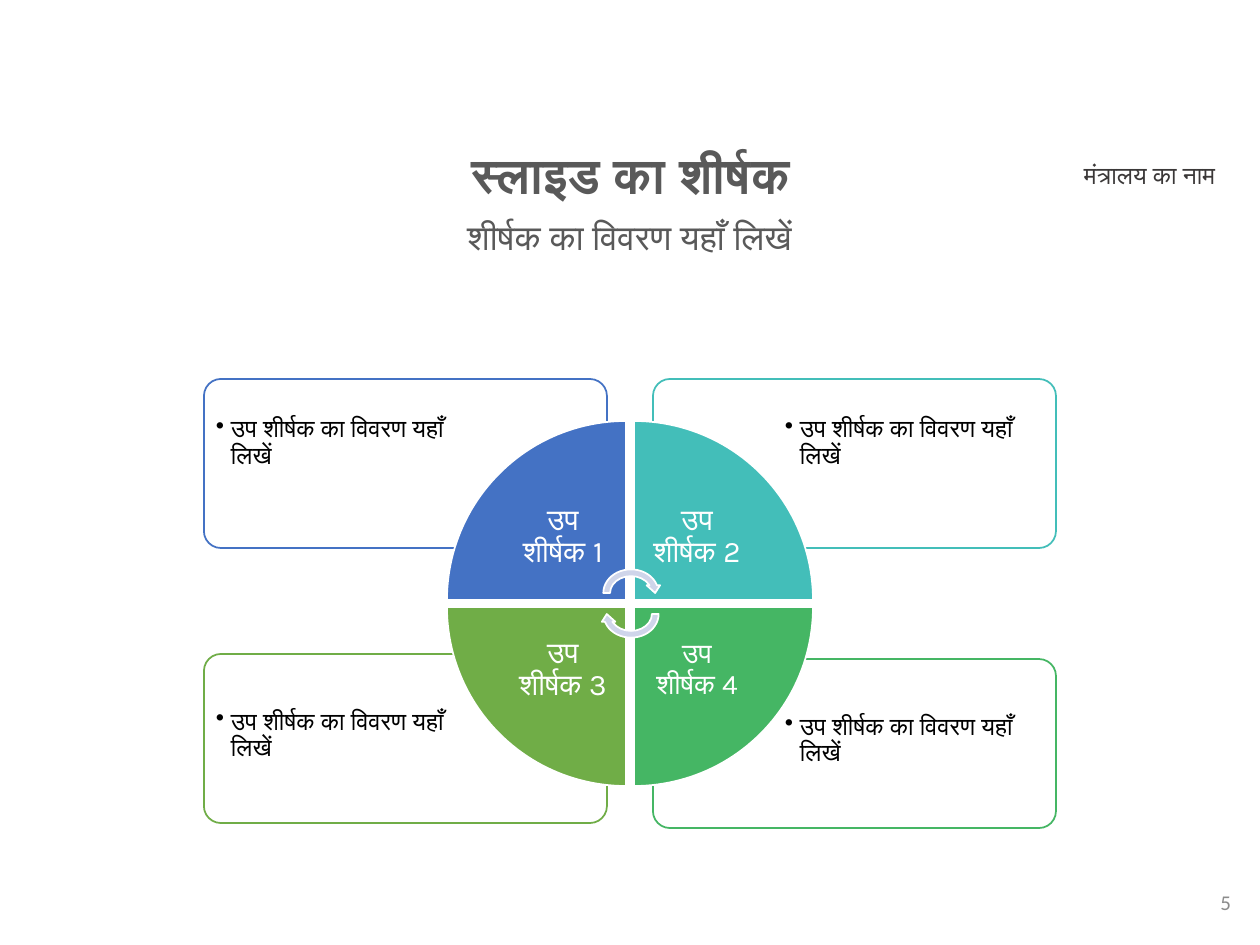
from dataclasses import dataclass

from lxml import etree
from pptx import Presentation
from pptx import util as u
from pptx.dml.color import RGBColor
from pptx.enum import shapes, text
from pptx.oxml.ns import qn

SCALE = 914400 / 126  # EMU per px
ALIGN = text.PP_ALIGN
ANCHOR = text.MSO_ANCHOR


@dataclass(frozen=True)
class Theme:
    heading_font: str = "Calibri"
    diagram_font: str = "Karla"
    white: str = "FFFFFF"
    black: str = "000000"
    heading: str = "595959"
    ministry: str = "3B3838"
    number: str = "8C8C8C"
    arrow: str = "CFD5EA"
    title_size: int = 28
    subtitle_size: int = 20
    body_size: int = 14
    number_size: int = 12


THEME = Theme()
DETAIL = "उप शीर्षक का विवरण यहाँ लिखें"
WEDGE = 179
LABEL = 126
# label, size, colour, column, row, rotation, card top
QUARTERS = [
    ("उप शीर्षक 1", 17, "4472C4", 0, 0, 0, 379),
    ("उप शीर्षक 2", 17, "43BEB9", 1, 0, 90, 379),
    ("उप शीर्षक 3", 17, "70AD47", 0, 1, 270, 654),
    ("उप शीर्षक 4", 16, "45B664", 1, 1, 180, 659),
]


def px(value):
    return u.Emu(round(value * SCALE))


def place(item, left, top, width, height):
    item.left, item.top, item.width, item.height = map(px, (left, top, width, height))


def write(box, words, *, size, color, font=THEME.heading_font, bold=False,
          align=ALIGN.CENTER, anchor=ANCHOR.TOP, inset=(13, 6), spacing=1.0,
          bullet_indent=0):
    """Fill a box with one formatted paragraph; inset is (sides, top and bottom)."""
    frame = box.text_frame
    frame.word_wrap = True
    frame.auto_size = text.MSO_AUTO_SIZE.NONE
    frame.vertical_anchor = anchor
    frame.margin_left = frame.margin_right = px(inset[0])
    frame.margin_top = frame.margin_bottom = px(inset[1])
    para = frame.paragraphs[0]
    para.alignment = align
    para.line_spacing = spacing
    para.space_before = u.Pt(0)
    if bullet_indent:
        props = para._p.get_or_add_pPr()
        props.set("marL", str(px(bullet_indent)))
        props.set("indent", str(-px(bullet_indent)))
        etree.SubElement(props, qn("a:buChar")).set("char", "•")
    span = para.add_run()
    span.text = words
    span.font.name = font
    span.font.size = u.Pt(size)
    span.font.bold = bold
    span.font.color.rgb = RGBColor.from_string(color)


def add_text(page, area, words, **style):
    box = page.shapes.add_textbox(*map(px, area))
    write(box, words, **style)


def add_figure(page, kind, area, fill, line, rotation=0):
    figure = page.shapes.add_shape(kind, *map(px, area))
    figure.shadow.inherit = False
    figure.fill.solid()
    figure.fill.fore_color.rgb = RGBColor.from_string(fill)
    figure.line.color.rgb = RGBColor.from_string(line)
    figure.line.width = u.Pt(1)
    figure.rotation = rotation
    return figure


def add_card(page, color, column, row, top):
    left = (204, 653)[column]
    card = add_figure(page, shapes.MSO_SHAPE.ROUNDED_RECTANGLE,
                      (left, top, 403, 169), THEME.white, color)
    card.adjustments[0] = 0.1
    tint = card._element.spPr.find(qn("a:solidFill")).find(qn("a:srgbClr"))
    etree.SubElement(tint, qn("a:alpha")).set("val", "90000")
    area = (left + (4, 124)[column], top + (4, 47)[row], 275, 120)
    add_text(page, area, DETAIL, size=THEME.body_size, color=THEME.black,
             font=THEME.diagram_font, align=ALIGN.LEFT, inset=(8, 8), spacing=0.9,
             anchor=(ANCHOR.MIDDLE, ANCHOR.TOP)[row], bullet_indent=15)


def add_wedge(page, label, size, color, column, row, rotation):
    left, top = (447, 634)[column], (421, 607)[row]
    add_figure(page, shapes.MSO_SHAPE.PIE_WEDGE, (left, top, WEDGE, WEDGE),
               color, THEME.white, rotation)
    shift = WEDGE - LABEL
    area = (left + shift * (1 - column), top + shift * (1 - row), LABEL, LABEL)
    add_text(page, area, label, size=size, color=THEME.white, spacing=0.9,
             font=THEME.diagram_font, anchor=ANCHOR.MIDDLE, inset=(16, 16))


def add_headings(page):
    title, subtitle = page.placeholders
    place(title, 234, 145, 793, 59)
    write(title, "स्लाइड का शीर्षक", size=THEME.title_size, color=THEME.heading,
          bold=True, spacing=0.9)
    place(subtitle, 184, 214, 891, 79)
    write(subtitle, "शीर्षक का विवरण यहाँ लिखें", size=THEME.subtitle_size,
          color=THEME.heading, spacing=0.9)


def main():
    deck = Presentation()
    deck.slide_width, deck.slide_height = px(1260), px(945)
    page = deck.slides.add_slide(deck.slide_layouts[0])
    add_headings(page)
    add_text(page, (1047, 154, 205, 43), "मंत्रालय का नाम",
             size=THEME.body_size, color=THEME.ministry)
    for label, size, color, column, row, rotation, top in reversed(QUARTERS):
        add_card(page, color, column, row, top)
    for label, size, color, column, row, rotation, top in QUARTERS:
        add_wedge(page, label, size, color, column, row, rotation)
    for top, rotation in ((566, 0), (587, 180)):
        add_figure(page, shapes.MSO_SHAPE.CIRCULAR_ARROW, (600, top, 62, 54),
                   THEME.arrow, THEME.white, rotation)
    add_text(page, (960, 877, 284, 50), "5", size=THEME.number_size,
             color=THEME.number, align=ALIGN.RIGHT, anchor=ANCHOR.MIDDLE)
    deck.save("out.pptx")


if __name__ == "__main__":
    main()
